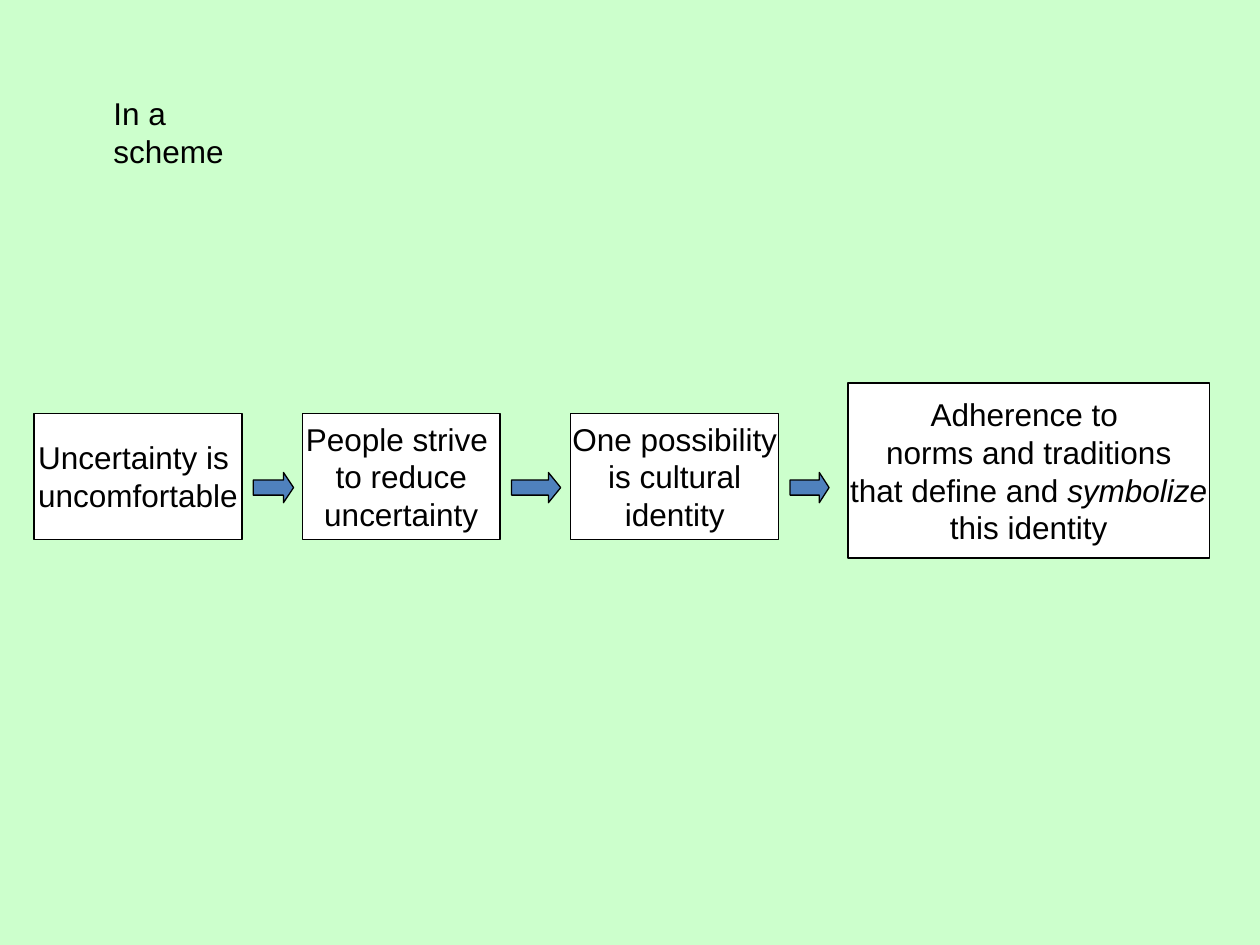
"""Build a slide showing how uncertainty leads to adherence to norms."""
from dataclasses import dataclass

from pptx import Presentation
from pptx.dml.color import RGBColor
from pptx.enum.shapes import MSO_SHAPE
from pptx.enum.text import MSO_ANCHOR, MSO_AUTO_SIZE, PP_ALIGN
from pptx.util import Inches, Pt

RECTANGLE = MSO_SHAPE.RECTANGLE
RIGHT_ARROW = MSO_SHAPE.RIGHT_ARROW
MIDDLE = MSO_ANCHOR.MIDDLE
TOP = MSO_ANCHOR.TOP
FIT_SHAPE = MSO_AUTO_SIZE.SHAPE_TO_FIT_TEXT
CENTER = PP_ALIGN.CENTER
LEFT = PP_ALIGN.LEFT

MINT = RGBColor(0xCC, 0xFF, 0xCC)
WHITE = RGBColor(0xFF, 0xFF, 0xFF)
BLACK = RGBColor(0x00, 0x00, 0x00)
BLUE = RGBColor(0x4F, 0x81, 0xBD)

SLIDE_WIDTH = Inches(10)
SLIDE_HEIGHT = Inches(7.5)
TITLE_ONLY = 5
ARROW_GAP = 0.009
ARROW_TOP = 0.5
ARROW_HEIGHT = 0.032


@dataclass(frozen=True)
class Area:
    """A rectangle in shares of the slide's width and height."""
    left: float
    top: float
    width: float
    height: float

    def lengths(self) -> tuple[int, int, int, int]:
        """Return left, top, width and height as slide lengths."""
        return (int(self.left * SLIDE_WIDTH), int(self.top * SLIDE_HEIGHT),
                int(self.width * SLIDE_WIDTH), int(self.height * SLIDE_HEIGHT))


@dataclass(frozen=True)
class Step:
    """A box of the scheme and the width of the arrow that follows it."""
    area: Area
    text: str
    arrow_width: float = 0
    emphasis: str = ""


TITLE_AREA = Area(0.08, 0.0933, 0.156, 0.0533)
STEPS = (
    Step(Area(0.027, 0.4373, 0.165, 0.1333),
         "Uncertainty is \nuncomfortable", 0.032),
    Step(Area(0.24, 0.4373, 0.157, 0.1333),
         "People strive \nto reduce\nuncertainty", 0.039),
    Step(Area(0.453, 0.4373, 0.165, 0.1333),
         "One possibility\nis cultural\nidentity", 0.031),
    Step(Area(0.673, 0.4053, 0.287, 0.1853),
         "Adherence to \nnorms and traditions\n"
         "that define and symbolize\nthis identity", emphasis="symbolize"),
)


def format_text(frame, alignment, anchor) -> None:
    """Give every run of a text frame the slide's type style."""
    frame.word_wrap = False
    frame.vertical_anchor = anchor
    for para in frame.paragraphs:
        para.alignment = alignment
        for span in para.runs:
            span.font.name = "Arial"
            span.font.size = Pt(18)
            span.font.color.rgb = BLACK


def emphasize(frame, word: str) -> None:
    """Set the word that ends a paragraph in italics."""
    for para in frame.paragraphs:
        if para.text.endswith(word):
            para.runs[0].text = para.text.removesuffix(word)
            span = para.add_run()
            span.text = word
            span.font.italic = True


def add_outlined(page, kind, area: Area, color: RGBColor):
    """Add a filled shape with a thin black outline."""
    shape = page.shapes.add_shape(kind, *area.lengths())
    shape.shadow.inherit = False
    shape.fill.solid()
    shape.fill.fore_color.rgb = color
    shape.line.color.rgb = BLACK
    shape.line.width = Pt(0.75)
    return shape


def add_box(page, step: Step) -> None:
    """Add the text box of one step."""
    box = add_outlined(page, RECTANGLE, step.area, WHITE)
    box.text_frame.text = step.text
    if step.emphasis:
        emphasize(box.text_frame, step.emphasis)
    format_text(box.text_frame, CENTER, MIDDLE)


def add_arrow(page, step: Step) -> None:
    """Add the arrow to the right of one step."""
    left = step.area.left + step.area.width + ARROW_GAP
    area = Area(left, ARROW_TOP, step.arrow_width, ARROW_HEIGHT)
    arrow = add_outlined(page, RIGHT_ARROW, area, BLUE)
    arrow.adjustments[0] = 0.5
    arrow.adjustments[1] = arrow.width / (4 * arrow.height)


def add_title(page) -> None:
    """Move and format the title placeholder."""
    title = page.shapes.title
    title.left, title.top, title.width, title.height = TITLE_AREA.lengths()
    title.text_frame.text = "In a scheme"
    format_text(title.text_frame, LEFT, TOP)
    title.text_frame.auto_size = FIT_SHAPE


def main() -> None:
    """Build and save the deck."""
    deck = Presentation()
    deck.slide_width, deck.slide_height = SLIDE_WIDTH, SLIDE_HEIGHT
    page = deck.slides.add_slide(deck.slide_layouts[TITLE_ONLY])
    page.background.fill.solid()
    page.background.fill.fore_color.rgb = MINT
    add_title(page)
    for step in STEPS:
        add_box(page, step)
    for step in STEPS[:-1]:
        add_arrow(page, step)
    deck.save("out.pptx")


if __name__ == "__main__":
    main()
